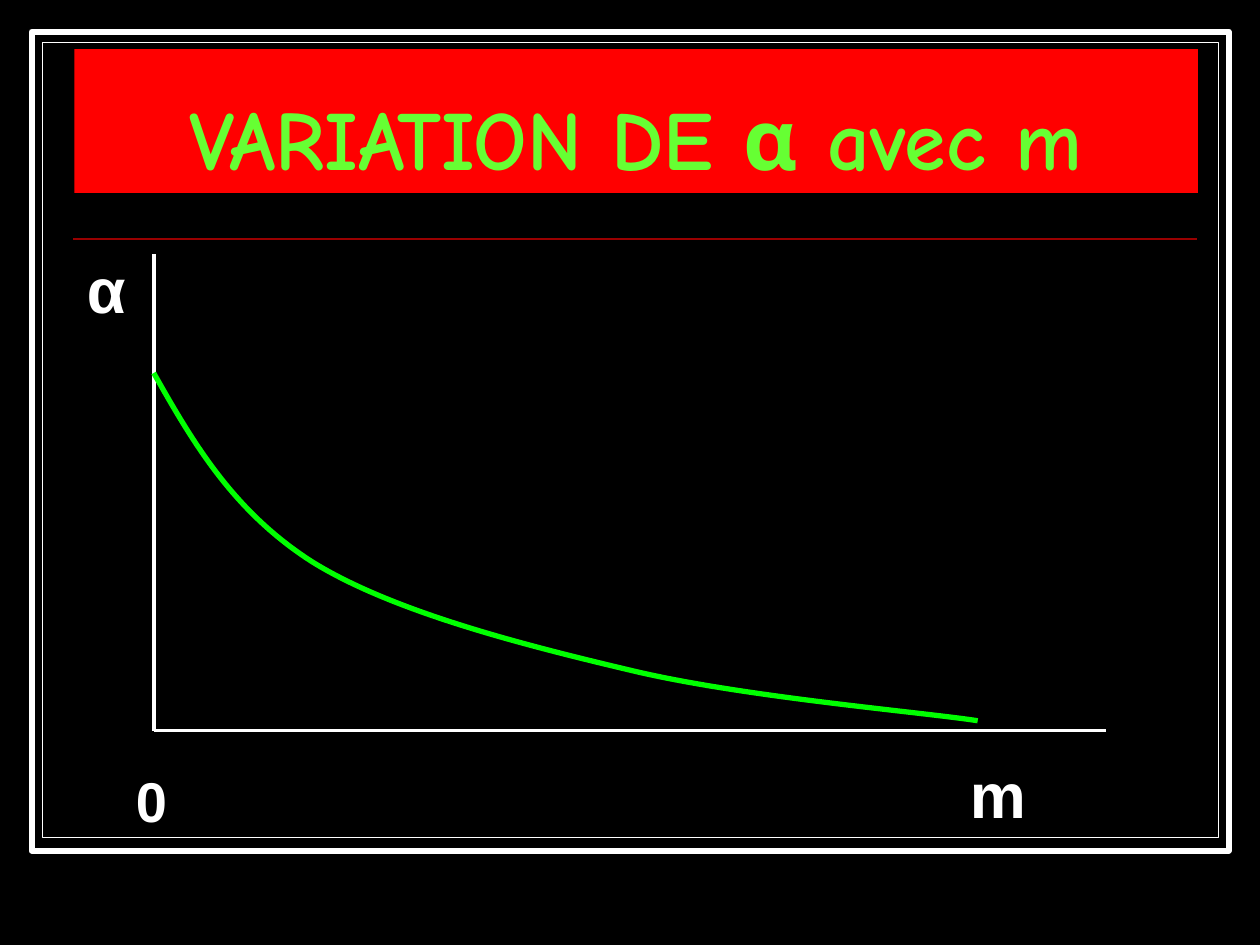
from dataclasses import dataclass

from lxml import etree
from pptx import Presentation
from pptx.dml.color import RGBColor
from pptx.enum.shapes import MSO_CONNECTOR, MSO_SHAPE
from pptx.enum.text import MSO_ANCHOR, MSO_AUTO_SIZE, PP_ALIGN
from pptx.oxml.ns import qn
from pptx.util import Cm, Pt

STRAIGHT = MSO_CONNECTOR.STRAIGHT
RECTANGLE = MSO_SHAPE.RECTANGLE
BOTTOM, TOP = MSO_ANCHOR.BOTTOM, MSO_ANCHOR.TOP
LEFT, CENTER = PP_ALIGN.LEFT, PP_ALIGN.CENTER
NO_FIT, GROW = MSO_AUTO_SIZE.NONE, MSO_AUTO_SIZE.SHAPE_TO_FIT_TEXT


@dataclass(frozen=True)
class Theme:
    black: RGBColor = RGBColor(0x00, 0x00, 0x00)
    white: RGBColor = RGBColor(0xFF, 0xFF, 0xFF)
    banner: RGBColor = RGBColor(0xFF, 0x00, 0x00)
    heading: RGBColor = RGBColor(0x66, 0xFF, 0x33)
    rule: RGBColor = RGBColor(0x99, 0x00, 0x00)
    curve: RGBColor = RGBColor(0x00, 0xFF, 0x00)
    heading_font: str = "Comic Neue"
    label_font: str = "Arial"
    heading_size: int = 48
    label_size: int = 36
    origin_size: int = 32


theme = Theme()


def write(shape, text, *, size, color, font, align=LEFT, anchor=TOP, fit=GROW, spacing=None):
    frame = shape.text_frame
    frame.word_wrap = True
    frame.auto_size = fit
    frame.vertical_anchor = anchor
    paragraph = frame.paragraphs[0]
    paragraph.alignment = align
    paragraph.line_spacing = spacing
    run = paragraph.add_run()
    run.text = text
    run.font.name = font
    run.font.size = Pt(size)
    run.font.bold = True
    run.font.color.rgb = color


def draw_line(shapes, start, end, color, width):
    line = shapes.add_connector(STRAIGHT, *map(Cm, start + end))
    line.line.color.rgb = color
    line.line.width = Pt(width)
    etree.SubElement(line._element.spPr, qn("a:effectLst"))


prs = Presentation()
prs.slide_width, prs.slide_height = Cm(25.4), Cm(19.05)
slide = prs.slides.add_slide(prs.slide_layouts[5])
slide.background.fill.solid()
slide.background.fill.fore_color.rgb = theme.black
shapes = slide.shapes

# Double frame
for left, top, width, height, weight in (
    (0.64, 0.64, 24.13, 16.51, 3.5),
    (0.86, 0.86, 23.7, 16.03, 0.75),
):
    border = shapes.add_shape(RECTANGLE, Cm(left), Cm(top), Cm(width), Cm(height))
    border.shadow.inherit = False
    border.fill.solid()
    border.fill.fore_color.rgb = theme.black
    border.line.color.rgb = theme.white
    border.line.width = Pt(weight)

# Rule under the title
draw_line(shapes, (1.48, 4.82), (24.13, 4.82), theme.rule, 1)

# Title banner, brought in front of the frame
title = shapes.title
title.left, title.top, title.width, title.height = Cm(1.5), Cm(0.99), Cm(22.65), Cm(2.9)
title.fill.solid()
title.fill.fore_color.rgb = theme.banner
write(title, "VARIATION DE α avec m", size=theme.heading_size, color=theme.heading,
      font=theme.heading_font, align=CENTER, anchor=BOTTOM, fit=NO_FIT, spacing=0.8)
shapes._spTree.append(title._element)

# Axes
origin = (3.1, 14.73)
for axis_end in ((22.3, 14.73), (3.1, 5.13)):
    draw_line(shapes, origin, axis_end, theme.white, 2)

# Decreasing curve: start point, then two handles and an end point per segment
curve_points = [
    (3.1, 7.52),
    (3.89, 8.92), (4.7, 10.31), (6.3, 11.33),
    (7.9, 12.32), (10.46, 12.98), (12.7, 13.51),
    (14.94, 14.05), (18.54, 14.35), (19.71, 14.53),
]
vertices = [(Cm(x), Cm(y)) for x, y in curve_points]
builder = shapes.build_freeform(*vertices[0])
builder.add_line_segments(vertices[1:], close=False)
curve = builder.convert_to_shape()
curve.shadow.inherit = False
curve.fill.background()
curve.line.color.rgb = theme.curve
curve.line.width = Pt(3)

# Turn each three straight steps into one Bézier segment
outline = next(curve._element.iter(qn("a:path")))
steps = outline.findall(qn("a:lnTo"))
for first in range(0, len(steps), 3):
    bezier = etree.SubElement(outline, qn("a:cubicBezTo"))
    for step in steps[first:first + 3]:
        bezier.append(step[0])
        outline.remove(step)

# Origin and axis labels
for text, left, top, width, height, size in (
    ("0", 2.49, 15.32, 1.19, 1.6, theme.origin_size),
    ("m", 19.3, 15.11, 3.2, 1.78, theme.label_size),
    ("α", 1.5, 4.93, 3.99, 1.78, theme.label_size),
):
    label = shapes.add_textbox(Cm(left), Cm(top), Cm(width), Cm(height))
    write(label, text, size=size, color=theme.white, font=theme.label_font)

prs.save("out.pptx")
